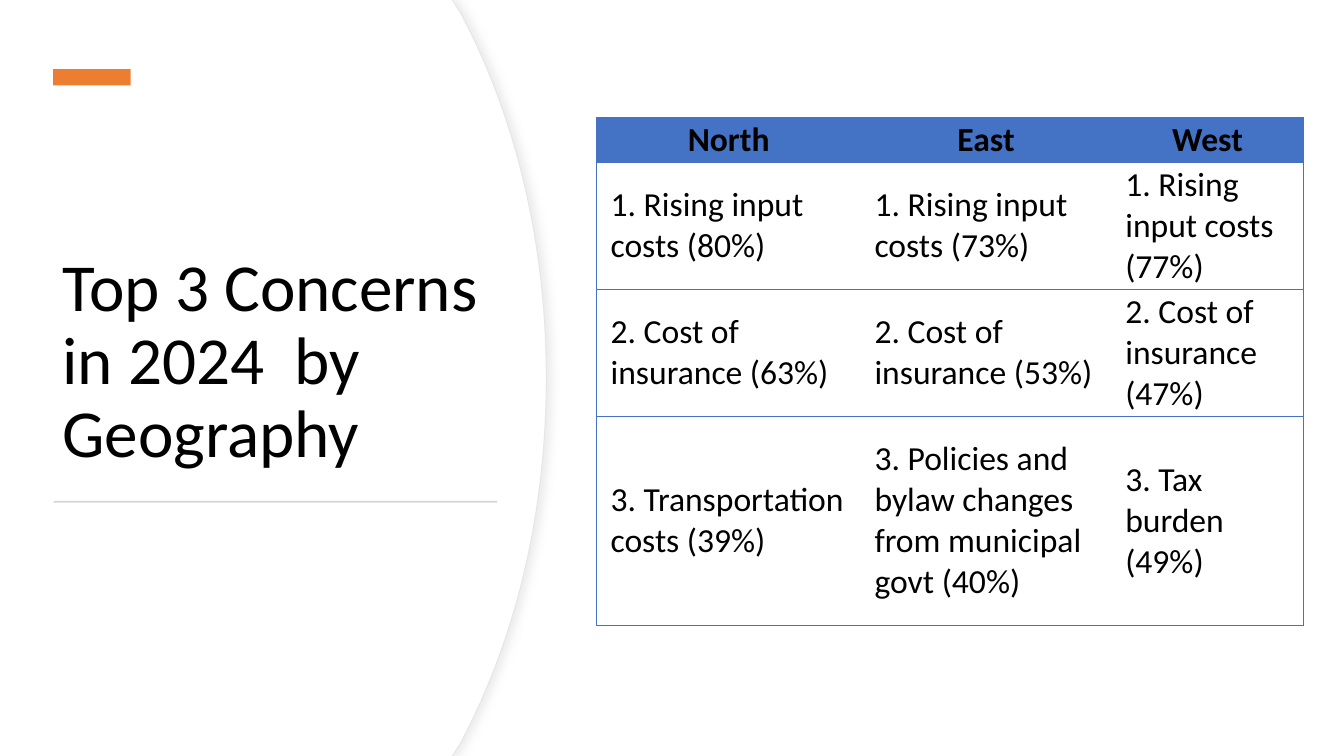
from lxml import etree
from pptx import Presentation
from pptx.dml.color import RGBColor
from pptx.enum import shapes, text
from pptx.oxml import ns
from pptx.util import Cm, Pt

HEADING = "Top 3 Concerns in 2024  by Geography"
CONCERNS = [
    ("North", "East", "West"),
    ("1. Rising input costs (80%)", "1. Rising input costs (73%)", "1. Rising input costs (77%)"),
    ("2. Cost of insurance (63%)", "2. Cost of insurance (53%)", "2. Cost of insurance (47%)"),
    ("3. Transportation costs (39%)",
     "3. Policies and bylaw changes from municipal govt (40%)",
     "3. Tax burden (49%)"),
]
COLUMN_WIDTHS = (6.65, 6.32, 4.84)
ROW_HEIGHTS = (1.14, 3.2, 3.2, 5.26)

FONT = "Calibri"
BLACK = RGBColor(0x00, 0x00, 0x00)
WHITE = RGBColor(0xFF, 0xFF, 0xFF)
BLUE = RGBColor(0x44, 0x72, 0xC4)
ORANGE = RGBColor(0xED, 0x7D, 0x31)
RULE_GREY = RGBColor(0xD5, 0xD5, 0xD5)
EDGE_GREY = RGBColor(0xE6, 0xE6, 0xE6)
SHADOW_GREY = RGBColor(0xD9, 0xD9, 0xD9)

SLIDE_HEIGHT = 19.05
PANEL_TOP_X = 11.4
ARC = ((11.61, 0.33), (12.98, 2.9), (13.77, 6.07), (13.77, SLIDE_HEIGHT / 2))
ARC_STEPS = 24


def write(frame, content, size=24, bold=False, align=text.PP_ALIGN.LEFT, spacing=1.0):
    frame.word_wrap = True
    paragraph = frame.paragraphs[0]
    paragraph.alignment = align
    paragraph.line_spacing = spacing
    run = paragraph.add_run()
    run.text = content
    run.font.name = FONT
    run.font.size = Pt(size)
    run.font.bold = bold
    run.font.color.rgb = BLACK


def arc_point(t):
    weights = ((1 - t) ** 3, 3 * t * (1 - t) ** 2, 3 * t * t * (1 - t), t ** 3)
    return tuple(sum(w * p[axis] for w, p in zip(weights, ARC)) for axis in (0, 1))


def add_panel(slide, inset=0.0):
    upper = [(PANEL_TOP_X, 0)] + [arc_point(i / ARC_STEPS) for i in range(ARC_STEPS + 1)]
    lower = [(x, SLIDE_HEIGHT - y) for x, y in reversed(upper[:-1])]
    edge = [(Cm(x - inset), Cm(y)) for x, y in upper + lower]
    builder = slide.shapes.build_freeform(0, 0)
    builder.add_line_segments(edge + [(0, Cm(SLIDE_HEIGHT))])
    panel = builder.convert_to_shape()
    panel.shadow.inherit = False
    panel.fill.solid()
    panel.fill.fore_color.rgb = WHITE
    panel.line.fill.background()
    return panel


def add_bar(slide, left, top, width, height, color):
    bar = slide.shapes.add_shape(
        shapes.MSO_SHAPE.RECTANGLE, Cm(left), Cm(top), Cm(width), Cm(height))
    bar.shadow.inherit = False
    bar.fill.solid()
    bar.fill.fore_color.rgb = color
    bar.line.fill.background()
    return bar


def cast_shadow(shape):
    effects = shape.element.spPr.find(ns.qn("a:effectLst"))
    shadow = etree.SubElement(effects, ns.qn("a:outerShdw"),
                              blurRad=str(Pt(6)), dist=str(Pt(3)), dir="0")
    color = etree.SubElement(shadow, ns.qn("a:srgbClr"), val=str(SHADOW_GREY))
    etree.SubElement(color, ns.qn("a:alpha"), val="50000")


def set_borders(cell, sides):
    properties = cell._tc.get_or_add_tcPr()
    for position, side in enumerate("LRTB"):
        border = etree.Element(ns.qn("a:ln" + side), w=str(Pt(0.5)))
        if side in sides:
            fill = etree.SubElement(border, ns.qn("a:solidFill"))
            etree.SubElement(fill, ns.qn("a:srgbClr"), val=str(BLUE))
        else:
            etree.SubElement(border, ns.qn("a:noFill"))
        properties.insert(position, border)


def add_concerns(slide):
    table = slide.shapes.add_table(
        len(CONCERNS), len(COLUMN_WIDTHS), Cm(15.04), Cm(2.95),
        Cm(sum(COLUMN_WIDTHS)), Cm(sum(ROW_HEIGHTS))).table
    table.first_row = table.horz_banding = False
    for column, width in zip(table.columns, COLUMN_WIDTHS):
        column.width = Cm(width)
    for r, concerns in enumerate(CONCERNS):
        header = r == 0
        table.rows[r].height = Cm(ROW_HEIGHTS[r])
        for c, concern in enumerate(concerns):
            cell = table.cell(r, c)
            cell.margin_left = cell.margin_right = Cm(0.35)
            cell.margin_top = cell.margin_bottom = 0
            cell.vertical_anchor = text.MSO_ANCHOR.MIDDLE
            if header:
                cell.fill.solid()
                cell.fill.fore_color.rgb = BLUE
            else:
                cell.fill.background()
            outer = {0: "L", len(concerns) - 1: "R"}.get(c, "")
            set_borders(cell, "TB" + outer)
            write(cell.text_frame, concern, bold=header,
                  align=text.PP_ALIGN.CENTER if header else text.PP_ALIGN.LEFT)


def main():
    deck = Presentation()
    deck.slide_width, deck.slide_height = Cm(33.87), Cm(SLIDE_HEIGHT)
    slide = deck.slides.add_slide(deck.slide_layouts[5])

    panel = add_panel(slide)
    panel.line.color.rgb = EDGE_GREY
    panel.line.width = Pt(0.75)
    cast_shadow(panel)
    add_panel(slide, inset=0.03)

    heading = slide.shapes.title
    slide.shapes.element.append(heading.element)
    heading.left, heading.top = Cm(1.32), Cm(3.12)
    heading.width, heading.height = Cm(11.18), Cm(8.89)
    heading.text_frame.auto_size = text.MSO_AUTO_SIZE.NONE
    heading.text_frame.vertical_anchor = text.MSO_ANCHOR.BOTTOM
    write(heading.text_frame, HEADING, size=48, spacing=0.9)

    accent = add_bar(slide, 2.11, 0.97, 0.41, 1.96, ORANGE)
    accent.rotation = 90
    add_bar(slide, 1.35, 12.62, 11.18, 0.05, RULE_GREY)
    add_concerns(slide)
    deck.save("out.pptx")


if __name__ == "__main__":
    main()
